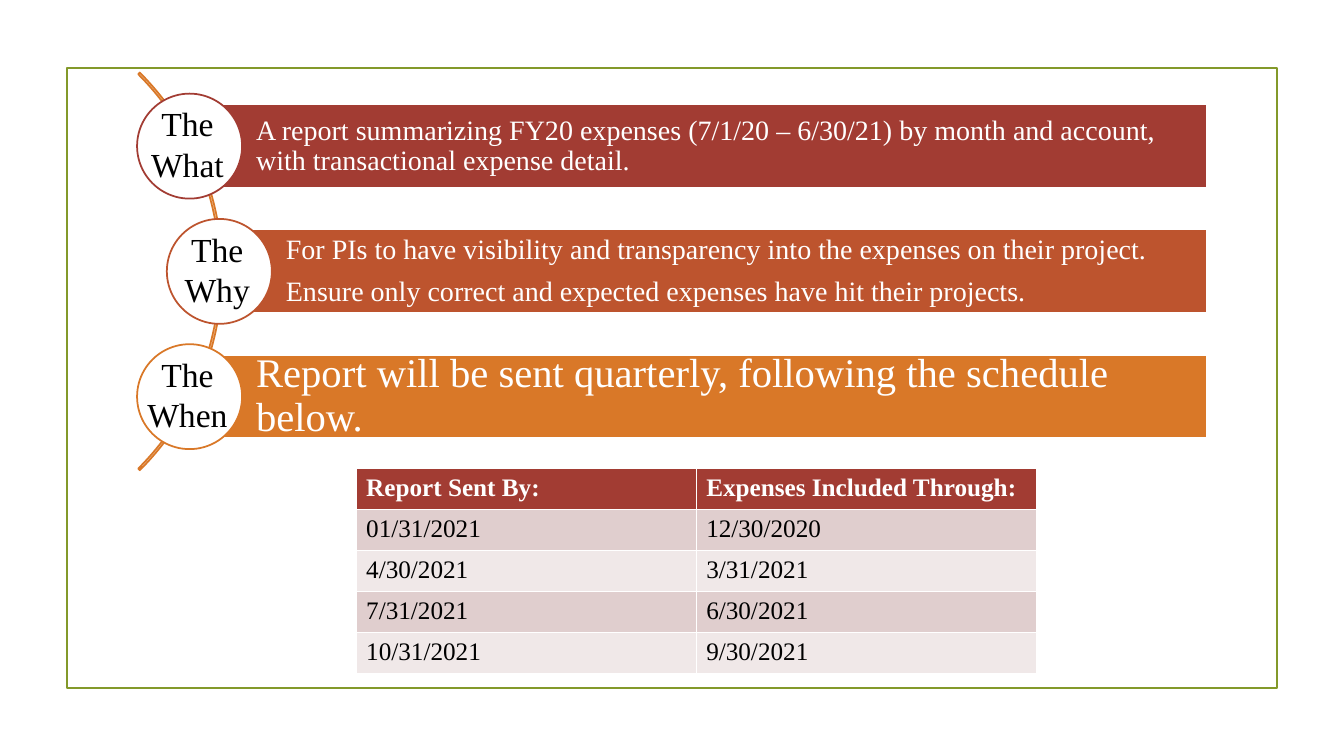
from collections import namedtuple
from math import hypot, sqrt

from pptx import Presentation
from pptx.dml.color import RGBColor
from pptx.enum.shapes import MSO_SHAPE
from pptx.enum.text import MSO_ANCHOR, PP_ALIGN
from pptx.util import Inches, Pt

RECTANGLE, OVAL, BLOCK_ARC = MSO_SHAPE.RECTANGLE, MSO_SHAPE.OVAL, MSO_SHAPE.BLOCK_ARC
MIDDLE = MSO_ANCHOR.MIDDLE
LEFT, CENTER = PP_ALIGN.LEFT, PP_ALIGN.CENTER

WIDTH, HEIGHT = Inches(13.33), Inches(7.5)
FONT = "Times New Roman"
WHITE = RGBColor(0xFF, 0xFF, 0xFF)
BLACK = RGBColor(0x00, 0x00, 0x00)
GREEN = RGBColor(0x83, 0x99, 0x2A)
RED = RGBColor(0xA2, 0x3C, 0x33)
RUST = RGBColor(0xBD, 0x54, 0x2E)
ORANGE = RGBColor(0xD9, 0x78, 0x28)
DARK_BAND = RGBColor(0xE0, 0xCE, 0xCE)
LIGHT_BAND = RGBColor(0xF0, 0xE8, 0xE8)

Box = namedtuple("Box", "left top width height")

TOPICS = [
    ("The What", RED, 20, 0.06, [
        "A report summarizing FY20 expenses (7/1/20 – 6/30/21) by month and account, "
        "with transactional expense detail."]),
    ("The Why", RUST, 20, 0.06, [
        "For PIs to have visibility and transparency into the expenses on their project.",
        "Ensure only correct and expected expenses have hit their projects."]),
    ("The When", ORANGE, 29, 0.08, [
        "Report will be sent quarterly, following the schedule below."]),
]
SCHEDULE = [
    ("Report Sent By:", "Expenses Included Through:"),
    ("01/31/2021", "12/30/2020"),
    ("4/30/2021", "3/31/2021"),
    ("7/31/2021", "6/30/2021"),
    ("10/31/2021", "9/30/2021"),
]


def region(left, top, width, height):
    """Return a box given as shares of the slide's size."""
    return Box(int(left * WIDTH), int(top * HEIGHT), int(width * WIDTH), int(height * HEIGHT))


def centered(x, y, width, height):
    """Return a box around a centre point."""
    return Box(int(x - width / 2), int(y - height / 2), int(width), int(height))


def add_outline(slide, preset, box, line, fill=None):
    """Add a preset shape with a thin line and an optional fill."""
    shape = slide.shapes.add_shape(preset, *box)
    shape.shadow.inherit = False
    if fill is None:
        shape.fill.background()
    else:
        shape.fill.solid()
        shape.fill.fore_color.rgb = fill
    shape.line.color.rgb = line
    shape.line.width = Pt(1.25)
    return shape


def style_paragraph(paragraph, size, color, alignment=LEFT, bold=False):
    """Set the font and alignment of a paragraph."""
    paragraph.alignment = alignment
    paragraph.font.name = FONT
    paragraph.font.size = Pt(size)
    paragraph.font.bold = bold
    paragraph.font.color.rgb = color


def add_bar(slide, box, color, size, inset, lines):
    """Add a coloured bar holding the explanation of a topic."""
    frame = add_outline(slide, RECTANGLE, box, WHITE, color).text_frame
    frame.word_wrap = True
    frame.vertical_anchor = MIDDLE
    frame.margin_left = Inches(0.66)
    frame.margin_top = frame.margin_right = frame.margin_bottom = Inches(inset)
    frame.text = "\n".join(lines)
    for paragraph in frame.paragraphs:
        style_paragraph(paragraph, size, WHITE)
        paragraph.line_spacing = 0.9
    for paragraph in frame.paragraphs[1:]:
        paragraph.space_before = Pt(8)


def add_label(slide, box, text):
    """Add the name of a topic over its circle."""
    frame = slide.shapes.add_textbox(*box).text_frame
    frame.word_wrap = True
    frame.text = text
    style_paragraph(frame.paragraphs[0], 24, BLACK, CENTER)


def add_topics(slide, box):
    """Place the topics along a quarter arc as tall as the box."""
    radius = box.height / sqrt(2)
    arc_x = box.left - box.height / 2
    middle_y = box.top + box.height / 2
    arc = add_outline(slide, BLOCK_ARC, centered(arc_x, middle_y, 2 * radius, 2 * radius), ORANGE)
    for index, value in enumerate((189, 27, 0.004)):
        arc.adjustments[index] = value

    diameter = 0.264 * box.height
    for index, (label, color, size, inset, lines) in enumerate(TOPICS):
        rise = (index - 1) * 0.315 * box.height
        x = int(arc_x + sqrt((0.99 * radius) ** 2 - rise ** 2))
        y = middle_y + rise
        bar_height = int(0.21 * box.height)
        bar = Box(x, int(y - bar_height / 2), box.left + box.width - x, bar_height)
        add_bar(slide, bar, color, size, inset, lines)
        add_outline(slide, OVAL, centered(x, y, diameter, diameter), color, WHITE)
        add_label(slide, centered(x - 0.02 * diameter, y - 0.02 * diameter,
                                  1.15 * diameter, 0.87 * diameter), label)


def add_schedule(slide, box):
    """Add the banded table of report dates."""
    table = slide.shapes.add_table(len(SCHEDULE), len(SCHEDULE[0]), *box).table
    for row, values in enumerate(SCHEDULE):
        header = row == 0
        band = RED if header else DARK_BAND if row % 2 else LIGHT_BAND
        for column, value in enumerate(values):
            cell = table.cell(row, column)
            cell.text = value
            cell.fill.solid()
            cell.fill.fore_color.rgb = band
            style_paragraph(cell.text_frame.paragraphs[0], 18, WHITE if header else BLACK,
                            bold=header)


def main():
    """Build and save the slide."""
    presentation = Presentation()
    presentation.slide_width, presentation.slide_height = WIDTH, HEIGHT
    slide = presentation.slides.add_slide(presentation.slide_layouts[6])
    add_outline(slide, RECTANGLE, region(0.05, 0.09, 0.9, 0.82), GREEN)
    add_topics(slide, region(0.104, 0.096, 0.794, 0.526))
    add_schedule(slide, region(0.265, 0.62, 0.506, 0.271))
    presentation.save("out.pptx")


if __name__ == "__main__":
    main()
